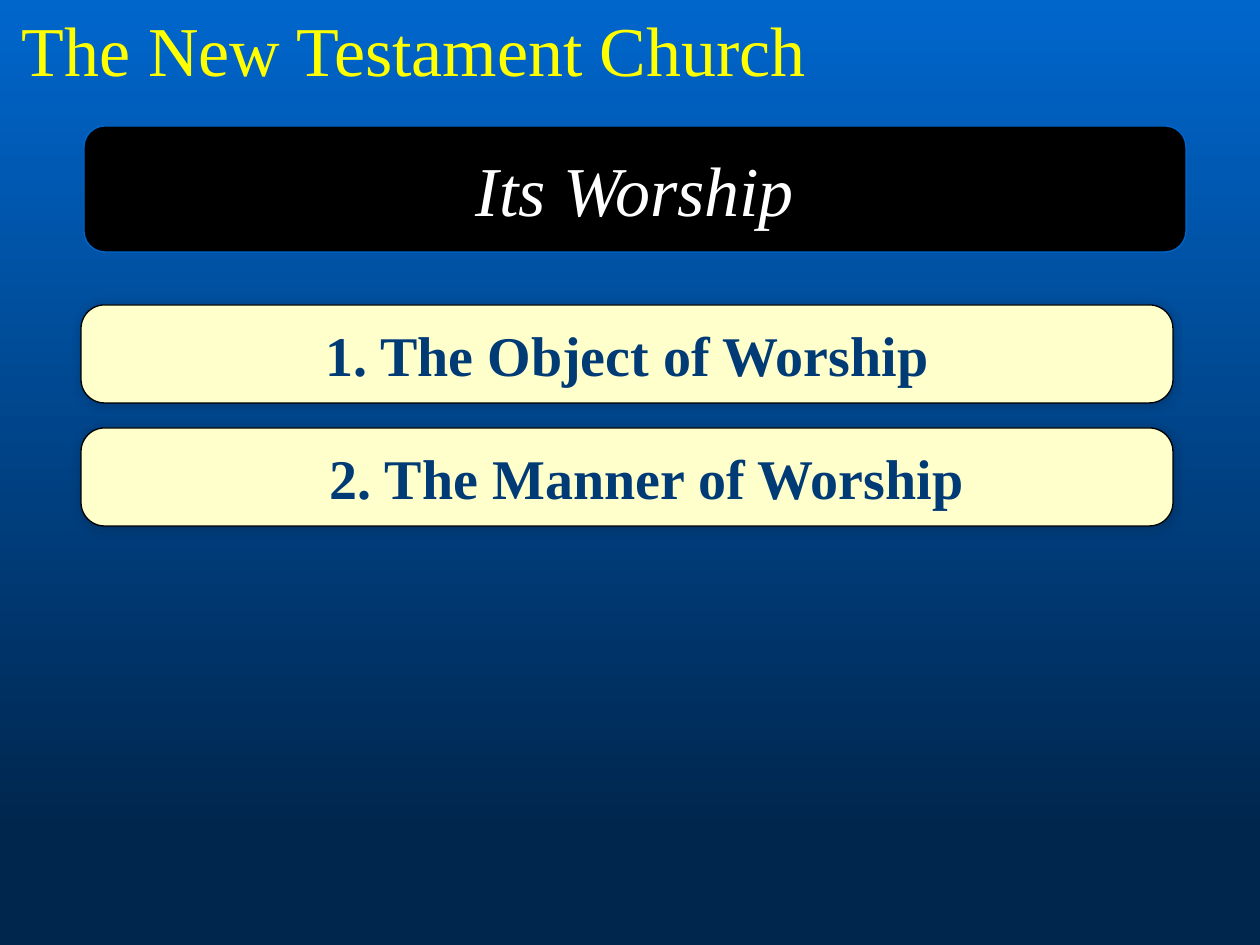
import pptx
import pptx.util
import pptx.dml.color
import pptx.enum.shapes
import pptx.enum.text
import pptx.oxml
import pptx.oxml.ns

RGBColor = pptx.dml.color.RGBColor
ALIGN = pptx.enum.text.PP_ALIGN
ANCHOR = pptx.enum.text.MSO_ANCHOR

PX = 914400 / 126
FONT = "Times New Roman"
SKY = RGBColor(0x00, 0x66, 0xCC)
NIGHT = RGBColor(0x00, 0x26, 0x4D)
NAVY = RGBColor(0x00, 0x3B, 0x76)
CREAM = RGBColor(0xFF, 0xFF, 0xCC)
YELLOW = RGBColor(0xFF, 0xFF, 0x00)
WHITE = RGBColor(0xFF, 0xFF, 0xFF)
BLACK = RGBColor(0x00, 0x00, 0x00)


def px(length):
    return pptx.util.Emu(round(length * PX))


def write(shape, text, size, color, bold=False, italic=False,
          align=ALIGN.CENTER, anchor=ANCHOR.MIDDLE, wrap=True, inset=None):
    frame = shape.text_frame
    frame.word_wrap = wrap
    frame.vertical_anchor = anchor
    if inset is not None:
        frame.margin_left = px(inset)
    para = frame.paragraphs[0]
    para.alignment = align
    span = para.add_run()
    span.text = text
    font = span.font
    font.name = FONT
    font.size = pptx.util.Pt(size)
    font.bold = bold
    font.italic = italic
    font.color.rgb = color
    return span


def add_panel(page, box, fill, line):
    kind = pptx.enum.shapes.MSO_SHAPE.ROUNDED_RECTANGLE
    panel = page.shapes.add_shape(kind, *map(px, box))
    panel.shadow.inherit = False
    panel.fill.solid()
    panel.fill.fore_color.rgb = fill
    panel.line.color.rgb = line
    panel.line.width = pptx.util.Pt(0.75)
    return panel


def add_soft_shadow(shape):
    effects = shape._element.spPr.find(pptx.oxml.ns.qn("a:effectLst"))
    effects.append(pptx.oxml.parse_xml(
        f'<a:outerShdw {pptx.oxml.ns.nsdecls("a")} blurRad="76200" dist="0" dir="13500000">'
        '<a:srgbClr val="000000"><a:alpha val="20000"/></a:srgbClr></a:outerShdw>'))


def paint_background(page):
    fill = page.background.fill
    fill.gradient()
    fill.gradient_angle = 270
    for stop, color, position in zip(fill.gradient_stops, (SKY, NIGHT), (0, 0.88)):
        stop.color.rgb = color
        stop.position = position


def add_title(page, box, text):
    title = page.shapes.add_textbox(*map(px, box))
    span = write(title, text, 40, YELLOW, anchor=ANCHOR.TOP, wrap=False)
    span.font._element.insert(0, pptx.oxml.parse_xml(
        f'<a:ln {pptx.oxml.ns.nsdecls("a")} w="9525">'
        f'<a:solidFill><a:srgbClr val="{SKY}"/></a:solidFill></a:ln>'))


def add_banner(page, box, text):
    banner = add_panel(page, box, BLACK, SKY)
    write(banner, text, 40, WHITE, italic=True)


def add_points(page, box, points, pitch):
    left, top, width, height = box
    for index, (text, layout) in enumerate(points):
        point = add_panel(page, (left, top + index * pitch, width, height), CREAM, BLACK)
        point.adjustments[0] = 0.24
        add_soft_shadow(point)
        write(point, text, 32, NAVY, bold=True, **layout)


def main():
    deck = pptx.Presentation()
    deck.slide_width, deck.slide_height = px(1260), px(945)
    page = deck.slides.add_slide(deck.slide_layouts[6])
    paint_background(page)
    add_title(page, (5, 0, 818, 97), "The New Testament Church")
    add_banner(page, (84, 126, 1102, 126), "Its Worship")
    points = [
        ("1. The Object of Worship", {"wrap": False}),
        ("2. The Manner of Worship", {"align": ALIGN.LEFT, "inset": 242}),
    ]
    add_points(page, (81, 305, 1092, 98), points, pitch=123)
    deck.save("out.pptx")


if __name__ == "__main__":
    main()
